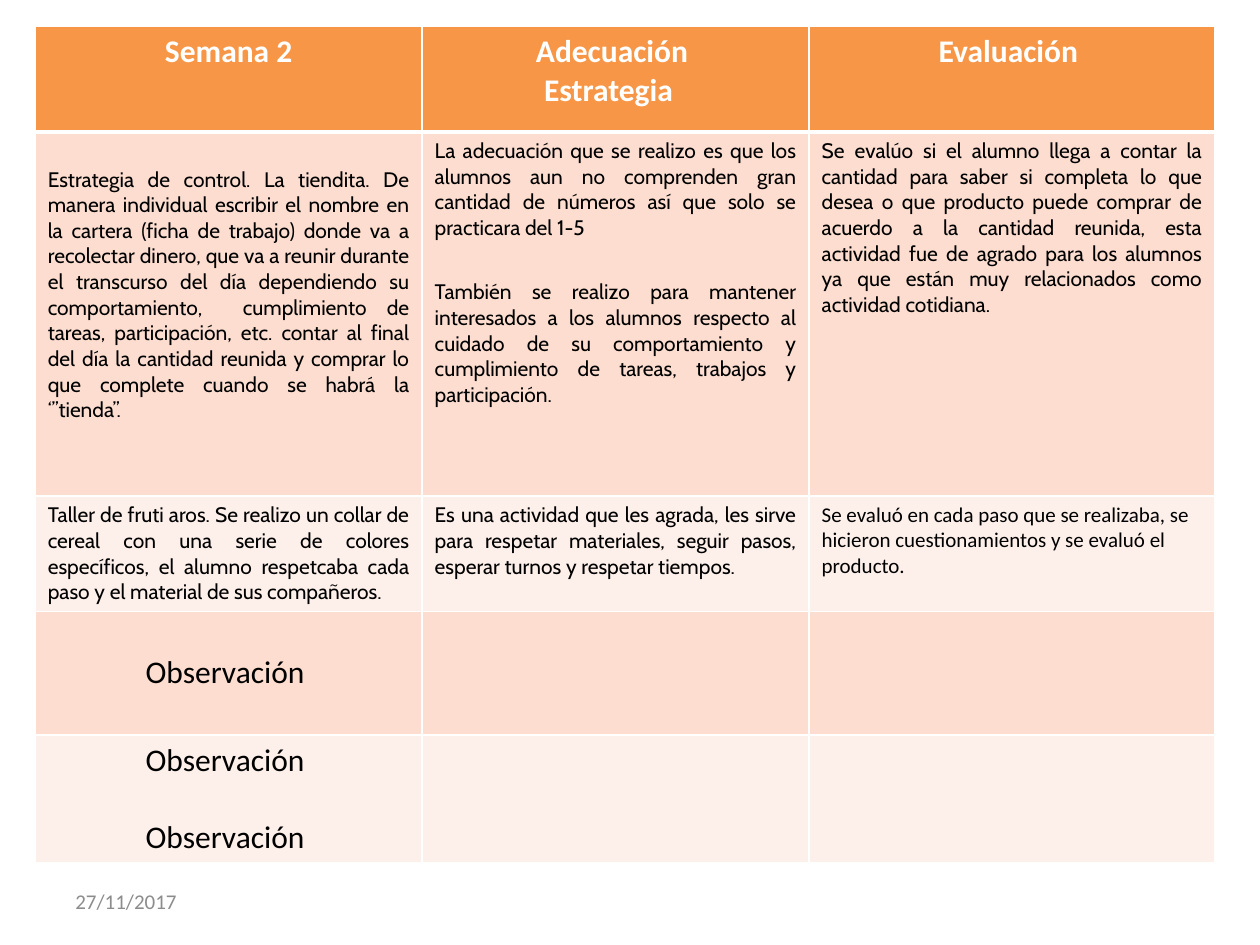
from lxml.etree import SubElement
from pptx import Presentation
from pptx.dml.color import RGBColor
from pptx.enum.text import MSO_ANCHOR as Anchor, PP_ALIGN as Align
from pptx.oxml.ns import qn
from pptx.util import Cm, Pt

WHITE = RGBColor(0xFF, 0xFF, 0xFF)
BLACK = RGBColor(0, 0, 0)
GRAY = RGBColor(0x8C, 0x8C, 0x8C)
ORANGE = RGBColor(0xF7, 0x96, 0x46)
BANDS = (RGBColor(0xFC, 0xDD, 0xCF), RGBColor(0xFD, 0xEF, 0xE9))

COL_WIDTHS = (7.8, 7.8, 8.18)
ROW_HEIGHTS = (2.13, 7.34, 2.06, 2.49, 2.54)
PARAGRAPH_GAP = 22

HEADERS = (["Semana 2"], ["Adecuación ", "Estrategia  "], ["Evaluación "])
ACTIVITIES = (
    (
        ["Estrategia de control. La tiendita. De manera individual escribir el "
         "nombre en la cartera (ficha de trabajo) donde va a recolectar dinero, "
         "que va a reunir durante el transcurso del día dependiendo su "
         "comportamiento,  cumplimiento de tareas, participación, etc. contar al "
         "final del día la cantidad reunida y comprar lo que complete cuando se "
         "habrá la ‘’’tienda’’."],
        ["La adecuación que se realizo es que los alumnos aun no comprenden gran "
         "cantidad de números así que solo se practicara del 1-5",
         "También se realizo para mantener interesados a los alumnos respecto al "
         "cuidado de su comportamiento y cumplimiento de tareas, trabajos y "
         "participación."],
        ["Se evalúo si el alumno llega a contar la cantidad para saber si completa "
         "lo que desea o que producto puede comprar de acuerdo a la cantidad "
         "reunida, esta actividad fue de agrado para los alumnos ya que están muy "
         "relacionados como actividad cotidiana. "],
    ),
    (
        ["Taller de fruti aros. Se realizo un collar de cereal con una serie de "
         "colores específicos, el alumno respetcaba cada paso y el material de "
         "sus compañeros."],
        ["Es una actividad que les agrada, les sirve para respetar materiales, "
         "seguir pasos, esperar turnos y respetar tiempos."],
        ["Se evaluó en cada paso que se realizaba, se hicieron cuestionamientos y "
         "se evaluó el producto."],
    ),
)
OBSERVATIONS = (["Observación "], ["Observación ", "Observación "])


def write(tf, texts, size, font="Calibri", color=BLACK, bold=False,
          align=Align.LEFT, gap=0):
    for i, text in enumerate(texts):
        p = tf.add_paragraph() if i else tf.paragraphs[0]
        p.alignment = align
        if i and gap:
            p.space_before = Pt(gap)
        r = p.add_run()
        r.text = text
        r.font.name, r.font.size, r.font.bold = font, Pt(size), bold
        r.font.color.rgb = color


def add_border(cell, side, width):
    ln = SubElement(cell._tc.get_or_add_tcPr(), qn(f"a:ln{side}"),
                    w=str(int(Pt(width))))
    fill = SubElement(ln, qn("a:solidFill"))
    SubElement(fill, qn("a:srgbClr"), val=str(WHITE))


def style_cell(cell, row):
    """Borders go in before the fill, as the schema orders them."""
    widths = {"L": 1, "R": 1, "T": 3 if row == 1 else 1, "B": 1 if row else 3}
    for side, width in widths.items():
        add_border(cell, side, width)
    cell.fill.solid()
    cell.fill.fore_color.rgb = BANDS[(row - 1) % 2] if row else ORANGE


def add_plan_table(slide):
    table = slide.shapes.add_table(
        len(ROW_HEIGHTS), len(COL_WIDTHS), Cm(0.71), Cm(0.53),
        Cm(sum(COL_WIDTHS)), Cm(sum(ROW_HEIGHTS))).table
    for column, width in zip(table.columns, COL_WIDTHS):
        column.width = Cm(width)
    for i, (row, height) in enumerate(zip(table.rows, ROW_HEIGHTS)):
        row.height = Cm(height)
        for cell in row.cells:
            style_cell(cell, i)
        if i:
            row.cells[0].vertical_anchor = Anchor.MIDDLE
    return table


def fill_plan(table):
    for col, texts in enumerate(HEADERS):
        write(table.cell(0, col).text_frame, texts, 18, color=WHITE,
              bold=True, align=Align.CENTER)
    for row, activity in enumerate(ACTIVITIES, 1):
        for col, texts in enumerate(activity):
            plain = (row, col) == (2, 2)
            write(table.cell(row, col).text_frame, texts, 12,
                  font="Calibri" if plain else "Cabin",
                  align=Align.LEFT if plain else Align.JUSTIFY,
                  gap=PARAGRAPH_GAP)
    for row, texts in enumerate(OBSERVATIONS, 3):
        write(table.cell(row, 0).text_frame, texts, 18, align=Align.CENTER,
              gap=PARAGRAPH_GAP)
    table.cell(1, 0).margin_bottom = Cm(0.9)


def add_date(slide, text):
    tf = slide.shapes.add_textbox(Cm(1.27), Cm(17.65), Cm(5.92), Cm(1.02)).text_frame
    tf.word_wrap = True
    tf.vertical_anchor = Anchor.MIDDLE
    write(tf, [text], 12, color=GRAY)


def main():
    prs = Presentation()
    prs.slide_width, prs.slide_height = Cm(25.4), Cm(19.05)
    s = prs.slides.add_slide(prs.slide_layouts[6])
    fill_plan(add_plan_table(s))
    add_date(s, "27/11/2017")
    prs.save("out.pptx")


if __name__ == "__main__":
    main()
